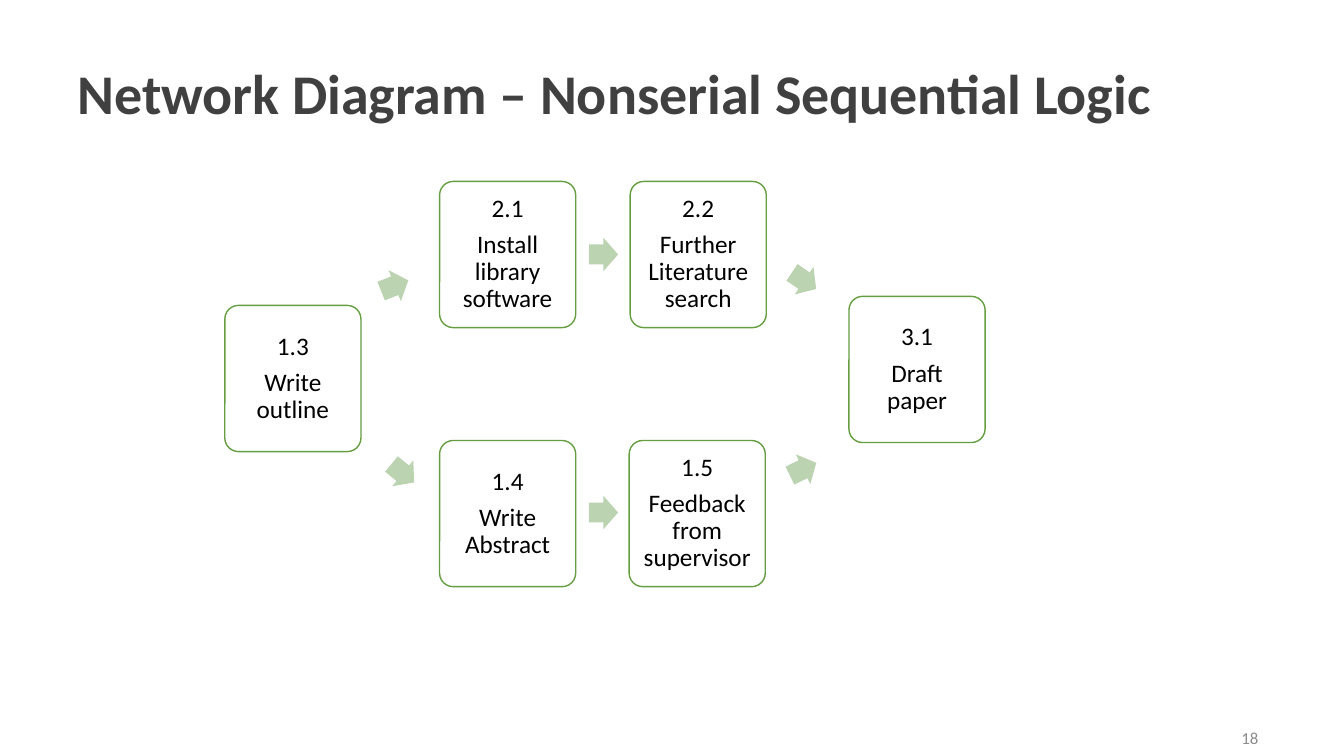
from dataclasses import dataclass

from pptx import Presentation
from pptx.dml.color import RGBColor
from pptx.enum import shapes, text
from pptx.util import Inches, Pt


@dataclass(frozen=True)
class Theme:
    font: str = "Calibri"
    title_color: str = "404041"
    body_color: str = "000000"
    number_color: str = "8C8C8C"
    card_fill: str = "FFFFFF"
    card_line: str = "669D40"
    arrow_fill: str = "BBD3B1"
    title_size: int = 40
    body_size: int = 18
    number_size: int = 12


def write(frame, lines, *, font, size, color, bold=False,
          align=text.PP_ALIGN.LEFT, spacing=1.0, gap=0, inset=None):
    """Fill a text frame, one paragraph per line, with gap points between them."""
    frame.word_wrap = True
    frame.vertical_anchor = text.MSO_ANCHOR.MIDDLE
    if inset is not None:
        frame.margin_left = frame.margin_right = Inches(inset)
        frame.margin_top = frame.margin_bottom = Inches(inset)
    for index, line in enumerate(lines):
        para = frame.add_paragraph() if index else frame.paragraphs[0]
        para.alignment = align
        para.line_spacing = spacing
        if index < len(lines) - 1:
            para.space_after = Pt(gap)
        span = para.add_run()
        span.text = line
        span.font.name = font
        span.font.size = Pt(size)
        span.font.bold = bold
        span.font.color.rgb = RGBColor.from_string(color)


class NetworkSlide:
    CARD_WIDTH, CARD_HEIGHT = 1.35, 1.45
    ARROW_WIDTH, ARROW_HEIGHT = 0.29, 0.33

    def __init__(self, page, theme):
        self.page = page
        self.theme = theme

    def label(self, line, left, top, width, height, **style):
        box = self.page.shapes.add_textbox(
            Inches(left), Inches(top), Inches(width), Inches(height))
        write(box.text_frame, [line], font=self.theme.font, **style)

    def shape(self, kind, left, top, width, height, fill):
        item = self.page.shapes.add_shape(
            kind, Inches(left), Inches(top), Inches(width), Inches(height))
        item.shadow.inherit = False
        item.fill.solid()
        item.fill.fore_color.rgb = RGBColor.from_string(fill)
        return item

    def card(self, number, task, left, top):
        theme = self.theme
        card = self.shape(shapes.MSO_SHAPE.ROUNDED_RECTANGLE, left, top,
                          self.CARD_WIDTH, self.CARD_HEIGHT, theme.card_fill)
        card.adjustments[0] = 0.1
        card.line.color.rgb = RGBColor.from_string(theme.card_line)
        card.line.width = Pt(1)
        write(card.text_frame, [number, task], font=theme.font,
              size=theme.body_size, color=theme.body_color,
              align=text.PP_ALIGN.CENTER, spacing=0.9, gap=6.3, inset=0.07)

    def arrow(self, left, top, angle=0):
        arrow = self.shape(shapes.MSO_SHAPE.RIGHT_ARROW, left, top,
                           self.ARROW_WIDTH, self.ARROW_HEIGHT,
                           self.theme.arrow_fill)
        arrow.adjustments[0] = 0.6
        arrow.adjustments[1] = 0.5
        arrow.line.fill.background()
        arrow.rotation = angle


TASKS = [
    ("1.3", "Write outline", 2.23, 3.03),
    ("2.1", "Install library software", 4.36, 1.8),
    ("2.2", "Further Literature search", 6.25, 1.8),
    ("1.4", "Write Abstract", 4.36, 4.37),
    ("1.5", "Feedback from supervisor", 6.24, 4.37),
    ("3.1", "Draft paper", 8.42, 2.94),
]
ARROWS = [
    (3.77, 2.67, 338.5),
    (5.84, 2.36, 0),
    (7.83, 2.62, 34.3),
    (3.85, 4.53, 39),
    (5.84, 4.92, 0),
    (7.82, 4.49, 334.1),
]


def main():
    deck = Presentation()
    deck.slide_width = Inches(13.33)
    deck.slide_height = Inches(7.5)
    theme = Theme()
    slide = NetworkSlide(deck.slides.add_slide(deck.slide_layouts[6]), theme)

    slide.label("Network Diagram – Nonserial Sequential Logic",
                0.67, 0.53, 12.11, 0.85, size=theme.title_size,
                color=theme.title_color, bold=True, spacing=0.9)
    slide.label("18", 9.58, 7.12, 3, 0.4, size=theme.number_size,
                color=theme.number_color, align=text.PP_ALIGN.RIGHT)
    for task in TASKS:
        slide.card(*task)
    for arrow in ARROWS:
        slide.arrow(*arrow)
    deck.save("out.pptx")


if __name__ == "__main__":
    main()
